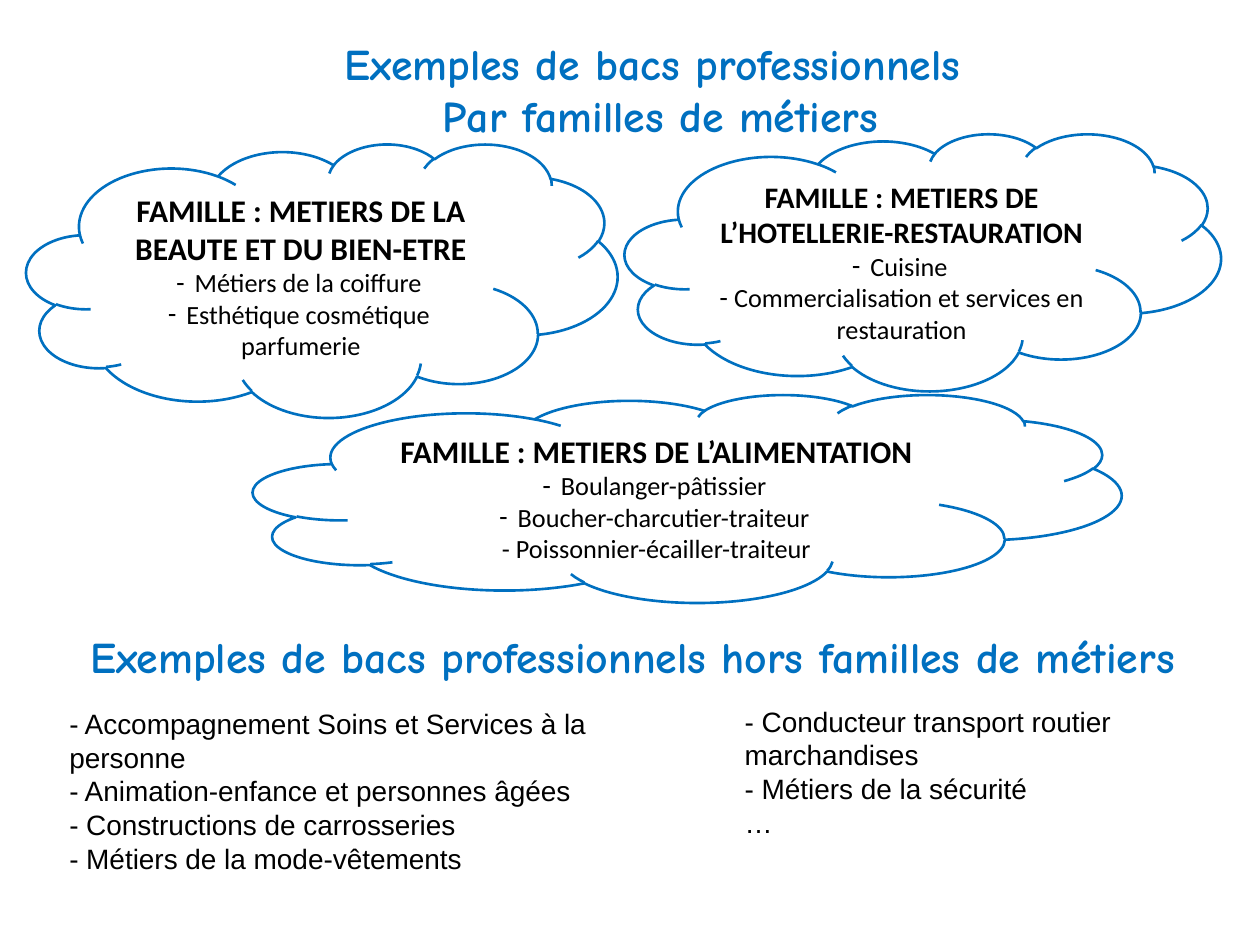
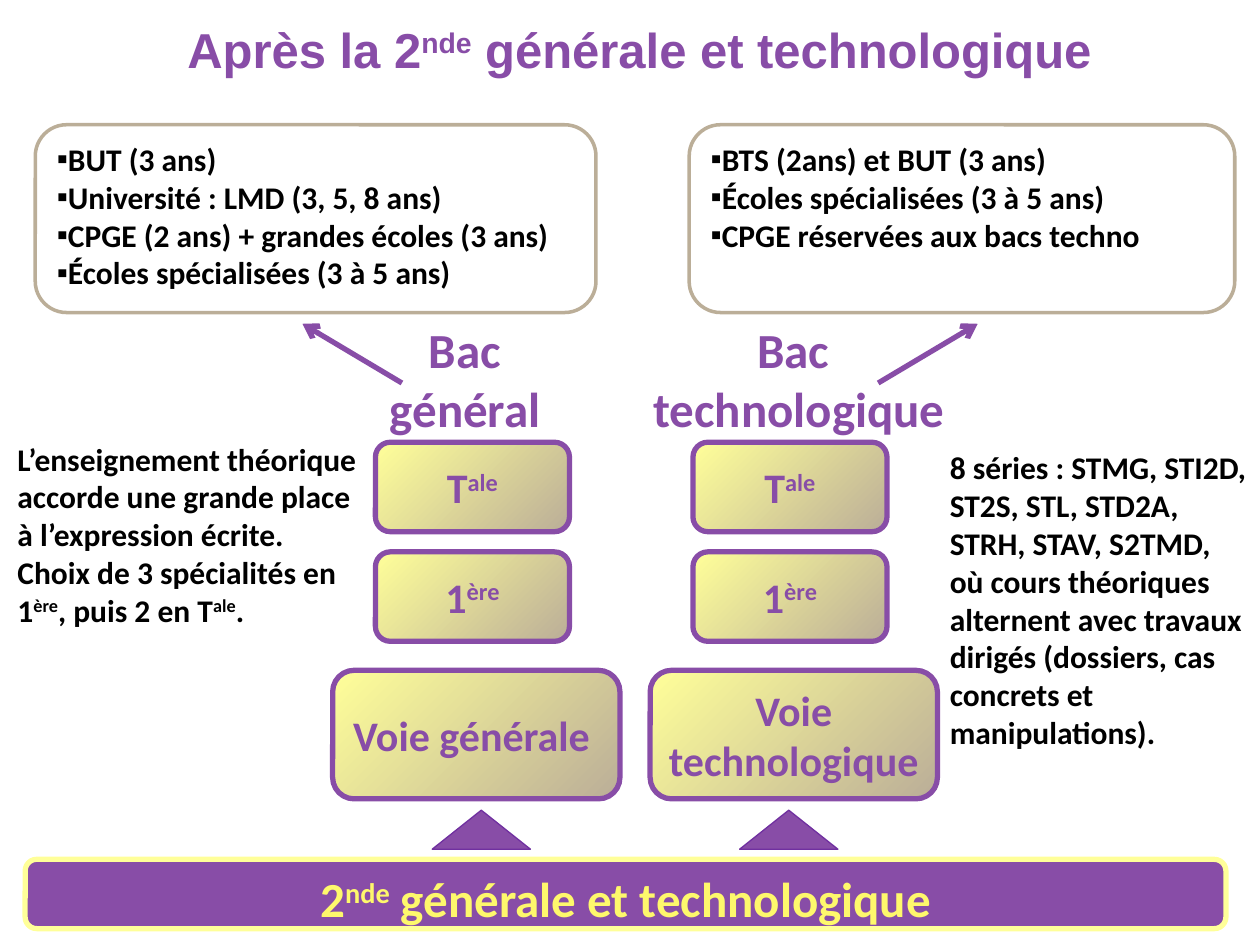
from lxml import etree
from pptx import Presentation
from pptx.dml.color import RGBColor
from pptx.enum.shapes import MSO_CONNECTOR, MSO_SHAPE
from pptx.enum.text import MSO_ANCHOR, MSO_AUTO_SIZE, PP_ALIGN
from pptx.oxml.ns import qn
from pptx.util import Pt

PX = 9144  # EMU in one px, 100 px to the inch

BLUE = RGBColor(0x00, 0x70, 0xC0)
PURPLE = RGBColor(0x88, 0x4D, 0xA7)
DARK_PURPLE = RGBColor(0x70, 0x30, 0xA0)
PALE_YELLOW = RGBColor(0xFF, 0xFF, 0x99)
YELLOW = RGBColor(0xFE, 0xF8, 0x6C)
TAN = RGBColor(0xBB, 0xAE, 0x98)
BLACK = RGBColor(0x00, 0x00, 0x00)
WHITE = RGBColor(0xFF, 0xFF, 0xFF)

LEFT, CENTER = PP_ALIGN.LEFT, PP_ALIGN.CENTER
TOP, MIDDLE = MSO_ANCHOR.TOP, MSO_ANCHOR.MIDDLE
NO_FIT, GROW = MSO_AUTO_SIZE.NONE, MSO_AUTO_SIZE.SHAPE_TO_FIT_TEXT
CLOUD, TRIANGLE = MSO_SHAPE.CLOUD, MSO_SHAPE.ISOSCELES_TRIANGLE
ROUND_RECT = MSO_SHAPE.ROUNDED_RECTANGLE
STRAIGHT = MSO_CONNECTOR.STRAIGHT
TITLE_ONLY = 5

BODY_FONT, TITLE_FONT, LIST_FONT = "Calibri", "Comic Neue", "Arial"
WIDE_INSETS, NARROW_INSETS, BAC_INSETS = (10, 5), (9, 4), (9, 5)


def add_text(tf, text, first=False, size=18, font=BODY_FONT, color=BLACK,
             bold=True, align=LEFT, bullet=None, indent=0):
    """Add one paragraph; text between two ^ marks is superscript."""
    p = tf.paragraphs[0] if first else tf.add_paragraph()
    p.alignment = align
    if bullet:
        set_bullet(p, bullet, indent)
    for i, part in enumerate(text.split("^")):
        if not part:
            continue
        r = p.add_run()
        r.text = part
        r.font.size, r.font.name, r.font.bold = Pt(size), font, bold
        r.font.color.rgb = color
        if i % 2:
            r._r.get_or_add_rPr().set("baseline", "30000")


def set_bullet(p, char, indent):
    pPr = p._p.get_or_add_pPr()
    pPr.set("marL", "0")
    pPr.set("indent", str(indent * PX))
    etree.SubElement(pPr, qn("a:buFont")).set("typeface", LIST_FONT)
    etree.SubElement(pPr, qn("a:buChar")).set("char", char)


class Deck:
    def __init__(self):
        self.prs = Presentation()
        self.prs.slide_width, self.prs.slide_height = 1000 * PX, 750 * PX
        self.s = None

    def slide(self):
        self.s = self.prs.slides.add_slide(self.prs.slide_layouts[TITLE_ONLY])

    def frame(self, sp, insets=WIDE_INSETS, anchor=TOP, fit=NO_FIT):
        tf = sp.text_frame
        tf.word_wrap = True
        tf.auto_size = fit
        tf.vertical_anchor = anchor
        tf.margin_left = tf.margin_right = insets[0] * PX
        tf.margin_top = tf.margin_bottom = insets[1] * PX
        return tf

    def lines(self, tf, texts, **fmt):
        for i, text in enumerate(texts):
            add_text(tf, text, first=i == 0, **fmt)

    def title(self, box, texts, insets=WIDE_INSETS, anchor=TOP, **fmt):
        sp = self.s.shapes.title
        sp.left, sp.top, sp.width, sp.height = (v * PX for v in box)
        self.lines(self.frame(sp, insets, anchor), texts, align=CENTER, **fmt)

    def text(self, box, texts, insets=WIDE_INSETS, fit=NO_FIT, **fmt):
        sp = self.s.shapes.add_textbox(*(v * PX for v in box))
        self.lines(self.frame(sp, insets, fit=fit), texts, **fmt)

    def shape(self, kind, box, line, width, fill=None, gradient=None):
        sp = self.s.shapes.add_shape(kind, *(v * PX for v in box))
        sp.shadow.inherit = False
        if gradient:
            sp.fill.gradient()
            sp.fill.gradient_angle = 315
            for stop, color in zip(sp.fill.gradient_stops, gradient):
                stop.color.rgb = color
        elif fill is not None:
            sp.fill.solid()
            sp.fill.fore_color.rgb = fill
        else:
            sp.fill.background()
        sp.line.color.rgb = line
        sp.line.width = Pt(width)
        return sp

    def cloud(self, box, family, jobs, size=18, last_typed=False):
        """Draw a family of trades; last_typed puts the last dash in the text."""
        tf = self.frame(self.shape(CLOUD, box, BLUE, 1.5, WHITE))
        add_text(tf, family, first=True, size=size, align=CENTER)
        for job in jobs:
            typed = last_typed and job == jobs[-1]
            add_text(tf, ("- " if typed else " ") + job, size=15, bold=False,
                     align=CENTER, bullet=None if typed else "-", indent=-10)

    def studies(self, box, texts):
        sp = self.shape(ROUND_RECT, box, TAN, 2)
        self.lines(self.frame(sp), texts, bullet="▪")

    def step(self, box, label):
        sp = self.shape(ROUND_RECT, box, PURPLE, 3,
                        gradient=(PALE_YELLOW, TAN))
        self.lines(self.frame(sp, anchor=MIDDLE), [label], size=24,
                   color=PURPLE, align=CENTER)

    def arrow(self, x1, y1, x2, y2):
        c = self.s.shapes.add_connector(
            STRAIGHT, x1 * PX, y1 * PX, x2 * PX, y2 * PX)
        c.line.color.rgb = PURPLE
        c.line.width = Pt(3)
        spPr = c._element.spPr
        etree.SubElement(spPr.find(qn("a:ln")),
                         qn("a:tailEnd")).set("type", "arrow")
        etree.SubElement(spPr, qn("a:effectLst"))


def vocational_slide(d):
    d.slide()
    heading = dict(size=25, font=TITLE_FONT, color=BLUE)
    d.title((162, 25, 724, 93),
            ["Exemples de bacs professionnels ", "Par familles de métiers"],
            NARROW_INSETS, **heading)
    d.cloud((201, 313, 689, 165), "FAMILLE : METIERS DE L’ALIMENTATION",
            ["Boulanger-pâtissier", "Boucher-charcutier-traiteur",
             "Poissonnier-écailler-traiteur"], last_typed=True)
    d.cloud((496, 106, 473, 204),
            "FAMILLE : METIERS DE L’HOTELLERIE-RESTAURATION",
            ["Cuisine", "Commercialisation et services en restauration"],
            size=17)
    d.cloud((21, 114, 469, 217),
            "FAMILLE : METIERS DE LA BEAUTE ET DU BIEN-ETRE",
            ["Métiers de la coiffure", "Esthétique cosmétique parfumerie"])
    d.text((2, 496, 1000, 52),
           ["Exemples de bacs professionnels hors familles de métiers"],
           NARROW_INSETS, GROW, align=CENTER, **heading)
    columns = [
        ((46, 557, 524, 147),
         ["- Accompagnement Soins et Services à la personne",
          "- Animation-enfance et personnes âgées",
          "- Constructions de carrosseries",
          "- Métiers de la mode-vêtements"]),
        ((582, 555, 389, 147),
         ["- Conducteur transport routier marchandises",
          "- Métiers de la sécurité", "…"]),
    ]
    for box, texts in columns:
        d.text(box, texts, NARROW_INSETS, GROW, size=16, font=LIST_FONT,
               bold=False)


def general_slide(d):
    d.slide()
    d.title((39, 7, 937, 63), ["Après la 2^nde^ générale et technologique"],
            anchor=MIDDLE, size=28, font=LIST_FONT, color=PURPLE)

    sp = d.shape(ROUND_RECT, (20, 682, 953, 55), PALE_YELLOW, 3, PURPLE)
    d.lines(d.frame(sp), ["2^nde^ générale et technologique"], size=28,
            color=YELLOW, align=CENTER)

    tracks = [(264, 343, "Voie générale "), (516, 587, "Voie technologique ")]
    for x, triangle_x, track in tracks:
        d.shape(TRIANGLE, (triangle_x, 643, 78, 31), DARK_PURPLE, 0.75, PURPLE)
        d.step((x, 532, 228, 102), track)
        for y, year in ((438, "1^ère^"), (351, "T^ale^")):
            d.step((x + 34, y, 154, 71), year)

    for x, width, name in ((295, 157, "général "),
                           (508, 252, "technologique ")):
        d.text((x, 249, width, 102), ["Bac ", name], BAC_INSETS, size=28,
               color=PURPLE, align=CENTER)
    for start, end in ((319, 240), (697, 776)):
        d.arrow(start, 304, end, 257)

    d.studies((28, 99, 445, 149),
              ["BUT (3 ans)", "Université : LMD (3, 5, 8 ans)",
               "CPGE (2 ans) + grandes écoles (3 ans)",
               "Écoles spécialisées (3 à 5 ans)"])
    d.studies((547, 99, 433, 149),
              ["BTS (2ans) et BUT (3 ans)", "Écoles spécialisées (3 à 5 ans)",
               "CPGE réservées aux bacs techno"])
    d.text((4, 344, 291, 108),
           ["L’enseignement théorique accorde une grande place à "
            "l’expression écrite.",
            "Choix de 3 spécialités en 1^ère^, puis 2 en T^ale^."])
    d.text((744, 351, 256, 100),
           ["8 séries : STMG, STI2D, ST2S, STL, STD2A, STRH, STAV, S2TMD, "
            "où cours théoriques alternent avec travaux dirigés (dossiers, "
            "cas concrets et manipulations)."])


def main():
    d = Deck()
    vocational_slide(d)
    general_slide(d)
    d.prs.save("out.pptx")


if __name__ == "__main__":
    main()
